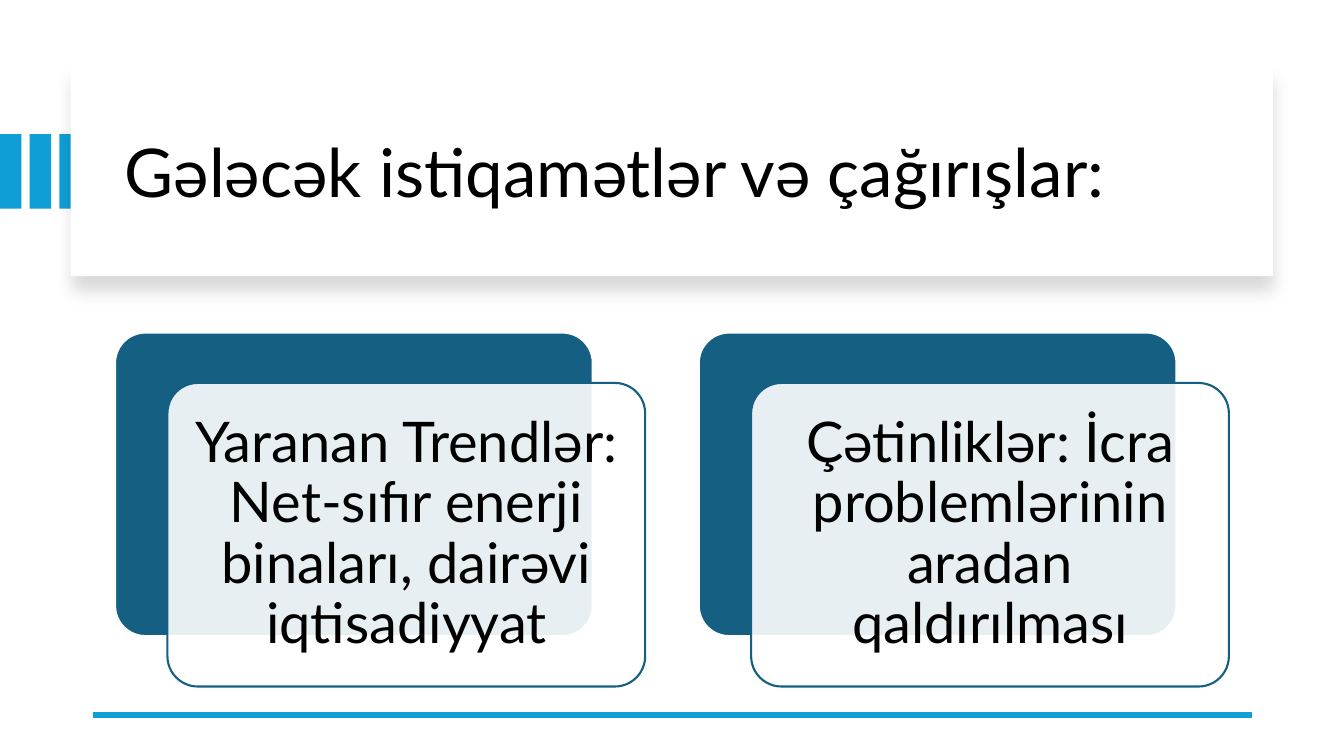
from dataclasses import dataclass

from lxml import etree
from pptx import Presentation
from pptx.dml.color import RGBColor
from pptx.enum.shapes import MSO_CONNECTOR as Connector, MSO_SHAPE as Shape
from pptx.enum.text import MSO_ANCHOR as Anchor, PP_ALIGN as Align
from pptx.oxml import parse_xml
from pptx.oxml.ns import nsdecls, qn
from pptx.shapes.autoshape import Shape as AutoShape
from pptx.slide import Slide
from pptx.util import Cm, Pt

WHITE, BLACK, ACCENT, DARK = "FFFFFF", "000000", "0F9ED5", "156082"
FONT = "Lato"


@dataclass(frozen=True)
class Box:
    left: float
    top: float
    width: float
    height: float

    def emu(self) -> tuple:
        return Cm(self.left), Cm(self.top), Cm(self.width), Cm(self.height)

    def shifted(self, dx: float, dy: float) -> "Box":
        return Box(self.left + dx, self.top + dy, self.width, self.height)

    def inset(self, gap: float) -> "Box":
        return Box(self.left + gap, self.top + gap,
                   self.width - 2 * gap, self.height - 2 * gap)


@dataclass(frozen=True)
class Card:
    box: Box
    text: str


def color(value: str) -> RGBColor:
    return RGBColor.from_string(value)


def add_box(s: Slide, kind: Shape, box: Box, fill: str, line: str = "") -> AutoShape:
    sp = s.shapes.add_shape(kind, *box.emu())
    sp.shadow.inherit = False
    sp.fill.solid()
    sp.fill.fore_color.rgb = color(fill)
    if line:
        sp.line.color.rgb = color(line)
        sp.line.width = Pt(1.5)
    else:
        sp.line.fill.background()
    return sp


def add_text(s: Slide, box: Box, text: str, size: int, align: Align,
             margin_x: float, margin_y: float) -> None:
    tf = s.shapes.add_textbox(*box.emu()).text_frame
    frame_format = {
        "word_wrap": True, "vertical_anchor": Anchor.MIDDLE,
        "margin_left": Cm(margin_x), "margin_right": Cm(margin_x),
        "margin_top": Cm(margin_y), "margin_bottom": Cm(margin_y),
    }
    for name, value in frame_format.items():
        setattr(tf, name, value)
    p = tf.paragraphs[0]
    for name, value in {"alignment": align, "line_spacing": 0.9}.items():
        setattr(p, name, value)
    r = p.add_run()
    r.text = text
    for name, value in {"name": FONT, "size": Pt(size)}.items():
        setattr(r.font, name, value)
    r.font.color.rgb = color(BLACK)


def add_panel(s: Slide, box: Box) -> None:
    sp = add_box(s, Shape.RECTANGLE, box, WHITE)
    effects = sp._element.spPr.find(qn("a:effectLst"))
    effects.append(parse_xml(
        f'<a:outerShdw {nsdecls("a")} blurRad="{Pt(11)}" dist="{Pt(10)}" '
        f'dir="5400000" algn="t" rotWithShape="0"><a:srgbClr val="{BLACK}">'
        '<a:alpha val="15000"/></a:srgbClr></a:outerShdw>'))


def add_rule(s: Slide, start: float, end: float, y: float) -> None:
    line = s.shapes.add_connector(Connector.STRAIGHT, Cm(start), Cm(y), Cm(end), Cm(y))
    line.line.color.rgb = color(ACCENT)
    line.line.width = Pt(4.5)
    etree.SubElement(line._element.spPr, qn("a:effectLst"))


def add_card(s: Slide, card: Card) -> None:
    front_box = card.box.shifted(1.32, 1.27)
    back = add_box(s, Shape.ROUNDED_RECTANGLE, card.box, DARK, WHITE)
    front = add_box(s, Shape.ROUNDED_RECTANGLE, front_box, WHITE, DARK)
    for sp in (back, front):
        sp.adjustments[0] = 0.1
    fill = front._element.spPr.find(qn("a:solidFill"))
    etree.SubElement(fill[0], qn("a:alpha"), val="90000")
    add_text(s, front_box.inset(0.23), card.text, 40, Align.CENTER, 0.42, 0.42)


def main() -> None:
    prs = Presentation()
    prs.slide_width, prs.slide_height = Cm(33.87), Cm(19.05)
    s = prs.slides.add_slide(prs.slide_layouts[6])

    for i in range(3):
        add_box(s, Shape.RECTANGLE, Box(0.75 * i, 3.38, 0.54, 1.88), ACCENT)
    add_panel(s, Box(1.78, 1.7, 30.3, 5.26))
    add_text(s, Box(2.9, 2.26, 28.27, 4.32), "Gələcək istiqamətlər və çağırışlar:",
             48, Align.LEFT, 0.25, 0.13)
    add_rule(s, 31.55, 2.34, 18.01)

    first = Box(2.9, 8.38, 12.04, 7.65)
    cards = [
        Card(first, "Yaranan Trendlər: Net-sıfır enerji binaları, dairəvi iqtisadiyyat"),
        Card(first.shifted(14.71, 0),
             "Çətinliklər: İcra problemlərinin aradan qaldırılması"),
    ]
    for card in cards:
        add_card(s, card)

    prs.save("out.pptx")


if __name__ == "__main__":
    main()
